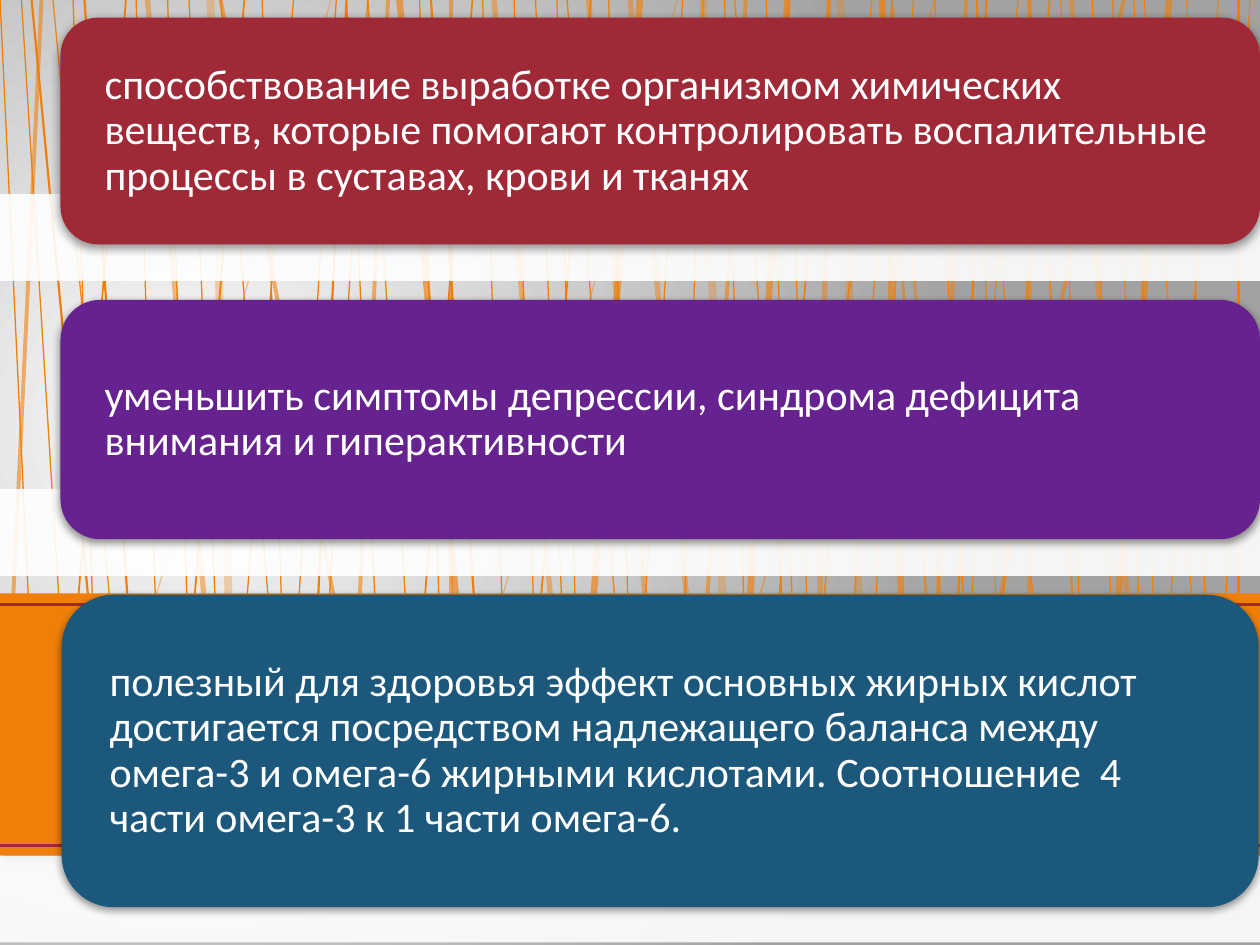
from pptx import Presentation
from pptx.dml.color import RGBColor
from pptx.enum.shapes import MSO_CONNECTOR, MSO_SHAPE
from pptx.enum.text import MSO_ANCHOR
from pptx.oxml import parse_xml
from pptx.oxml.ns import nsdecls, qn
from pptx.util import Inches, Pt
from lxml.etree import SubElement

ORANGE, RED, PURPLE, BLUE, WHITE = "F07F09", "9F2936", "66228E", "1B587C", "FFFFFF"

# Strands by (width, opacity): pairs of top and bottom x
STRANDS = {
    (0.75, 100): [
        (2.08, 2.25), (1.75, 2.17), (2.33, 1.92), (0, 0.25), (0.17, 0.5),
        (0.58, 0.75), (2.67, 2.34), (2.92, 2.58), (1.5, 1.73), (1.08, 1.25),
        (1.33, 1.5), (4.83, 5), (4.5, 4.92), (2.75, 3), (2.92, 3.25),
        (4.42, 4.58), (3.33, 3.5), (5.42, 5.09), (5.58, 5.42), (4.25, 4.48),
        (3.83, 4), (4.08, 4.25), (5.83, 6.25), (6.92, 6.5), (6.25, 6.42),
        (7.25, 6.92), (7.08, 6.75), (6.08, 6.31), (5.75, 5.92), (7.42, 7.67),
        (7.75, 7.92), (8.42, 8.58), (8.67, 8.83), (9.42, 9.58), (9.08, 9.5),
        (9.67, 9.25), (9, 9.17), (9.92, 9.71), (8.83, 9.06), (8.08, 7.67)],
    (0.75, 90): [(0.42, 0.92), (7.75, 8.25)],
    (0.75, 56): [(7.42, 5.87)],
    (0.75, 39): [(2.63, 1.08), (5.38, 3.83)],
    (1, 100): [(1, 0.58), (1.94, 1.5), (3.75, 3.33), (4.69, 4.25),
               (6.58, 6.14), (8.33, 7.92)],
    (1.25, 100): [(0.25, 0.75), (0.67, 1.05), (2.75, 2.5), (3.42, 3.8),
                  (7.83, 7.58), (9.83, 9.83)],
    (1.25, 72): [(8.17, 8.55), (7, 7.39)],
    (1.5, 58): [(7.08, 7.5)],
    (2.25, 58): [(0.33, 0.08), (1.75, 2.75), (3.08, 2.83), (3.58, 3.58),
                 (5.92, 5.58), (7.67, 7.42), (8.17, 8.17), (8.92, 7.83)],
    (3, 47): [(1.17, 1.67), (3.92, 4.42), (4.67, 5.17), (8.5, 9),
              (6.58, 6.5), (5, 5.5)],
    (3.75, 63): [(5.08, 4.67), (3.17, 3.67), (9.28, 8.83), (7, 7.17),
                 (6.25, 5.92)],
    (4.5, 30): [(1.67, 1.83), (6.67, 6.83), (5.58, 5.75)],
}

# Strip top, panel box, text margin, colour, text
PANELS = [
    (1.54, (0.48, 0.14, 9.52, 1.8), 0.09, RED,
     "способствование выработке организмом химических веществ, которые "
     "помогают контролировать воспалительные процессы в суставах, крови и тканях"),
    (3.88, (0.48, 2.38, 9.52, 1.9), 0.09, PURPLE,
     "уменьшить симптомы депрессии, синдрома дефицита внимания и гиперактивности"),
    (6.79, (0.49, 4.72, 9.5, 2.48), 0.12, BLUE,
     "полезный для здоровья эффект основных жирных кислот достигается "
     "посредством надлежащего баланса между омега-3 и омега-6 жирными "
     "кислотами. Соотношение  4 части омега-3 к 1 части омега-6."),
]


def color(code):
    return RGBColor.from_string(code)


def fade(owner, alpha):
    tint = owner.find(".//" + qn("a:srgbClr"))
    SubElement(tint, qn("a:alpha"), val=str(alpha * 1000))


class Deck:
    font, size = "Calibri", Pt(24)

    def __init__(self):
        self.file = Presentation()
        self.file.slide_width, self.file.slide_height = Inches(10), Inches(7.5)
        self.slide = self.file.slides.add_slide(self.file.slide_layouts[6])
        self.shapes = self.slide.shapes

    def ground(self, inner, outer):
        self.slide.element.cSld.insert(0, parse_xml(
            f'<p:bg {nsdecls("p", "a")}><p:bgPr><a:gradFill rotWithShape="1"><a:gsLst>'
            f'<a:gs pos="0"><a:srgbClr val="{inner}"/></a:gs>'
            f'<a:gs pos="100000"><a:srgbClr val="{outer}"/></a:gs></a:gsLst>'
            '<a:path path="circle"><a:fillToRect l="15000" t="50000" r="85000" b="60000"/>'
            '</a:path></a:gradFill><a:effectLst/></p:bgPr></p:bg>'))

    def line(self, start, end, code, width, alpha=100):
        ends = [Inches(v) for v in (*start, *end)]
        line = self.shapes.add_connector(MSO_CONNECTOR.STRAIGHT, *ends)
        line.line.color.rgb = color(code)
        line.line.width = Pt(width)
        props = line.element.spPr
        if alpha < 100:
            fade(props, alpha)
        SubElement(props, qn("a:effectLst"))

    def block(self, kind, box, code, alpha=100, shadow=None):
        block = self.shapes.add_shape(kind, *map(Inches, box))
        block.fill.solid()
        block.fill.fore_color.rgb = color(code)
        block.line.fill.background()
        block.shadow.inherit = False
        props = block.element.spPr
        if alpha < 100:
            fade(props, alpha)
        if shadow:
            depth, blur, dist, angle = shadow
            cast = SubElement(props.find(qn("a:effectLst")), qn("a:outerShdw"),
                              blurRad=str(Pt(blur)), dist=str(Pt(dist)),
                              dir=str(angle * 60000), algn="ctr", rotWithShape="0")
            SubElement(cast, qn("a:srgbClr"), val="000000")
            fade(cast, depth)

    def text(self, box, words):
        frame = self.shapes.add_textbox(*map(Inches, box)).text_frame
        frame.word_wrap = True
        frame.vertical_anchor = MSO_ANCHOR.MIDDLE
        frame.margin_left = frame.margin_right = Inches(0.26)
        frame.margin_top = frame.margin_bottom = 0
        frame.text = words
        para = frame.paragraphs[0]
        para.line_spacing = 0.9
        font = para.runs[0].font
        font.name, font.size = self.font, self.size
        font.color.rgb = color(WHITE)


def main():
    deck = Deck()

    # Backdrop with strands
    deck.ground("FCFCFC", "A2A2A2")
    for (width, alpha), pairs in STRANDS.items():
        for top, foot in pairs:
            deck.line((top, -0.01), (foot, 5.27), ORANGE, width, alpha)

    # Orange band with two rules
    deck.block(MSO_SHAPE.RECTANGLE, (0, 4.71, 10, 2.08), ORANGE, shadow=(40, 4, 3, 45))
    for y in (4.8, 6.71):
        deck.line((0, y), (10, y), RED, 1.5)

    # Panels over pale strips
    for strip, box, pad, code, words in PANELS:
        deck.block(MSO_SHAPE.RECTANGLE, (0, strip, 10, 0.69), WHITE, alpha=90)
        deck.block(MSO_SHAPE.ROUNDED_RECTANGLE, box, code, shadow=(43, 5, 2, 90))
        x, y, wide, high = box
        deck.text((x + pad, y + pad, wide - 2 * pad, high - 2 * pad), words)

    deck.file.save("out.pptx")


if __name__ == "__main__":
    main()
